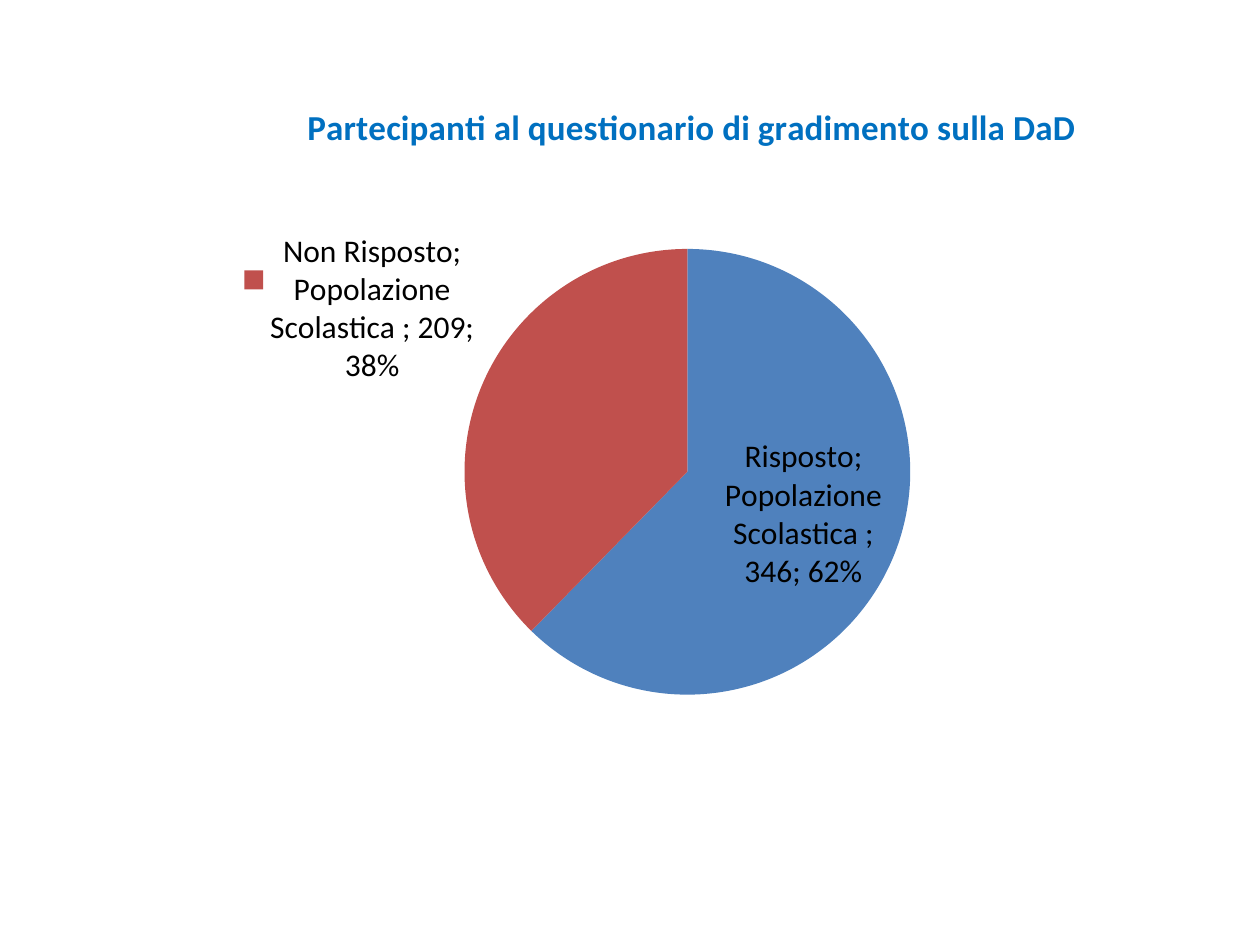
import dataclasses

import lxml.etree
import pptx
import pptx.chart.data
import pptx.dml.color
import pptx.enum.chart
import pptx.oxml
import pptx.oxml.ns
import pptx.util

Inches = pptx.util.Inches
Position = pptx.enum.chart.XL_LABEL_POSITION
qn = pptx.oxml.ns.qn


@dataclasses.dataclass(frozen=True)
class Theme:
    font: str = "Calibri"
    text: str = "000000"
    title: str = "0070C0"
    text_size: int = 18
    title_size: int = 20


@dataclasses.dataclass(frozen=True)
class Slice:
    name: str
    count: int
    color: str
    label_position: Position


THEME = Theme()
SLICES = [
    Slice("Risposto", 346, "4F81BD", Position.CENTER),
    Slice("Non Risposto", 209, "C0504D", Position.OUTSIDE_END),
]


def style_font(font, size: int, color: str, bold: bool = False) -> None:
    font.name = THEME.font
    font.size = pptx.util.Pt(size)
    font.bold = bold
    font.color.rgb = pptx.dml.color.RGBColor.from_string(color)


def make_layout(inner: bool = False, **fractions: float):
    """Return a manual layout given as fractions of the chart area."""
    layout = pptx.oxml.parse_xml(f'<c:layout {pptx.oxml.ns.nsdecls("c")}/>')
    manual = lxml.etree.SubElement(layout, qn("c:manualLayout"))
    settings = {"layoutTarget": "inner"} if inner else {}
    settings |= {"xMode": "edge", "yMode": "edge"} | fractions
    for tag, value in settings.items():
        lxml.etree.SubElement(manual, qn(f"c:{tag}")).set("val", str(value))
    return layout


def place(parent, layout, after: str | None = None) -> None:
    for old in parent.findall(qn("c:layout")):
        parent.remove(old)
    index = 0 if after is None else parent.index(parent.find(qn(after))) + 1
    parent.insert(index, layout)


def style_slice(point, part: Slice) -> None:
    point.format.fill.solid()
    point.format.fill.fore_color.rgb = pptx.dml.color.RGBColor.from_string(part.color)
    label = point.data_label
    style_font(label.font, THEME.text_size, THEME.text)
    label.position = part.label_position


def show_all_parts(labels) -> None:
    """Show key, category, series, value and percentage in a label."""
    for tag in ("LegendKey", "Val", "CatName", "SerName", "Percent"):
        labels.find(qn(f"c:show{tag}")).set("val", "1")
    separator = lxml.etree.Element(qn("c:separator"))
    separator.text = "; "
    labels.find(qn("c:showBubbleSize")).addnext(separator)


def main() -> None:
    prs = pptx.Presentation()
    prs.slide_width, prs.slide_height = Inches(10), Inches(7.5)
    s = prs.slides.add_slide(prs.slide_layouts[6])

    # Pie chart
    data = pptx.chart.data.CategoryChartData()
    data.categories = [part.name for part in SLICES]
    data.add_series("Popolazione Scolastica ", [part.count for part in SLICES])
    chart = s.shapes.add_chart(
        pptx.enum.chart.XL_CHART_TYPE.PIE,
        Inches(0.94), Inches(0.7), Inches(8.52), Inches(5.8), data,
    ).chart
    style_font(chart.font, THEME.text_size, THEME.text)
    chart.has_legend = False
    plot = chart.plots[0]
    plot.vary_by_categories = True
    plot_area = chart.element.find(f".//{qn('c:plotArea')}")
    place(plot_area, make_layout(inner=True, x=0.32, y=0.22, w=0.42, h=0.61))

    # Title
    chart.has_title = True
    title = chart.chart_title
    p = title.text_frame.paragraphs[0]
    p.text = "Partecipanti al questionario di gradimento sulla DaD"
    style_font(p.font, THEME.title_size, THEME.title, bold=True)
    title.include_in_layout = True
    place(title.element if hasattr(title, "element") else title._element,
          make_layout(x=0.17, y=0.01), after="c:tx")

    # Slices and their labels
    series = plot.series[0]
    for index, part in enumerate(SLICES):
        style_slice(series.points[index], part)
    labels = series.data_labels
    style_font(labels.font, THEME.text_size, THEME.text)
    group = chart.element.find(f".//{qn('c:ser')}/{qn('c:dLbls')}")
    for item in [group, *group.findall(qn("c:dLbl"))]:
        show_all_parts(item)

    prs.save("out.pptx")


if __name__ == "__main__":
    main()
